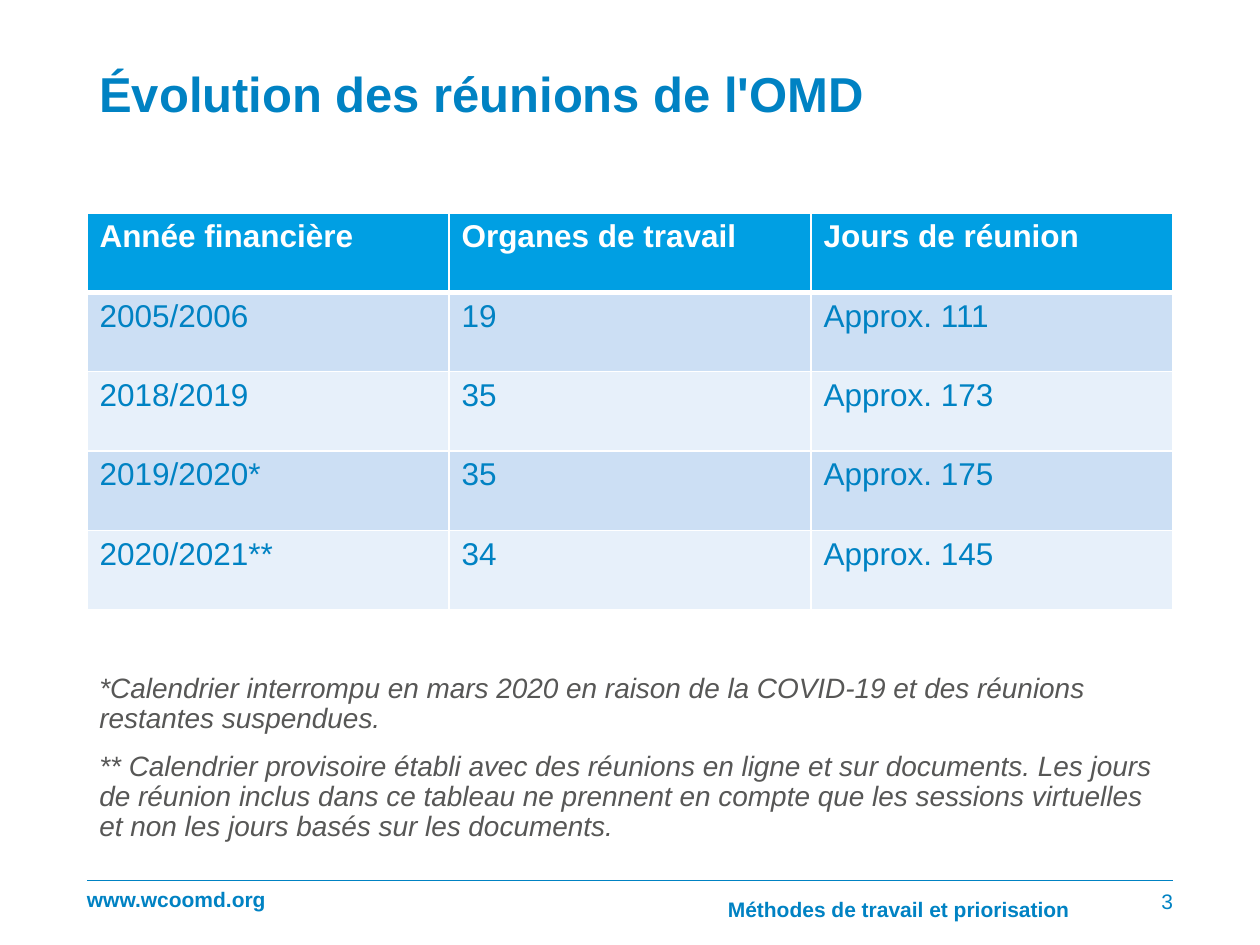
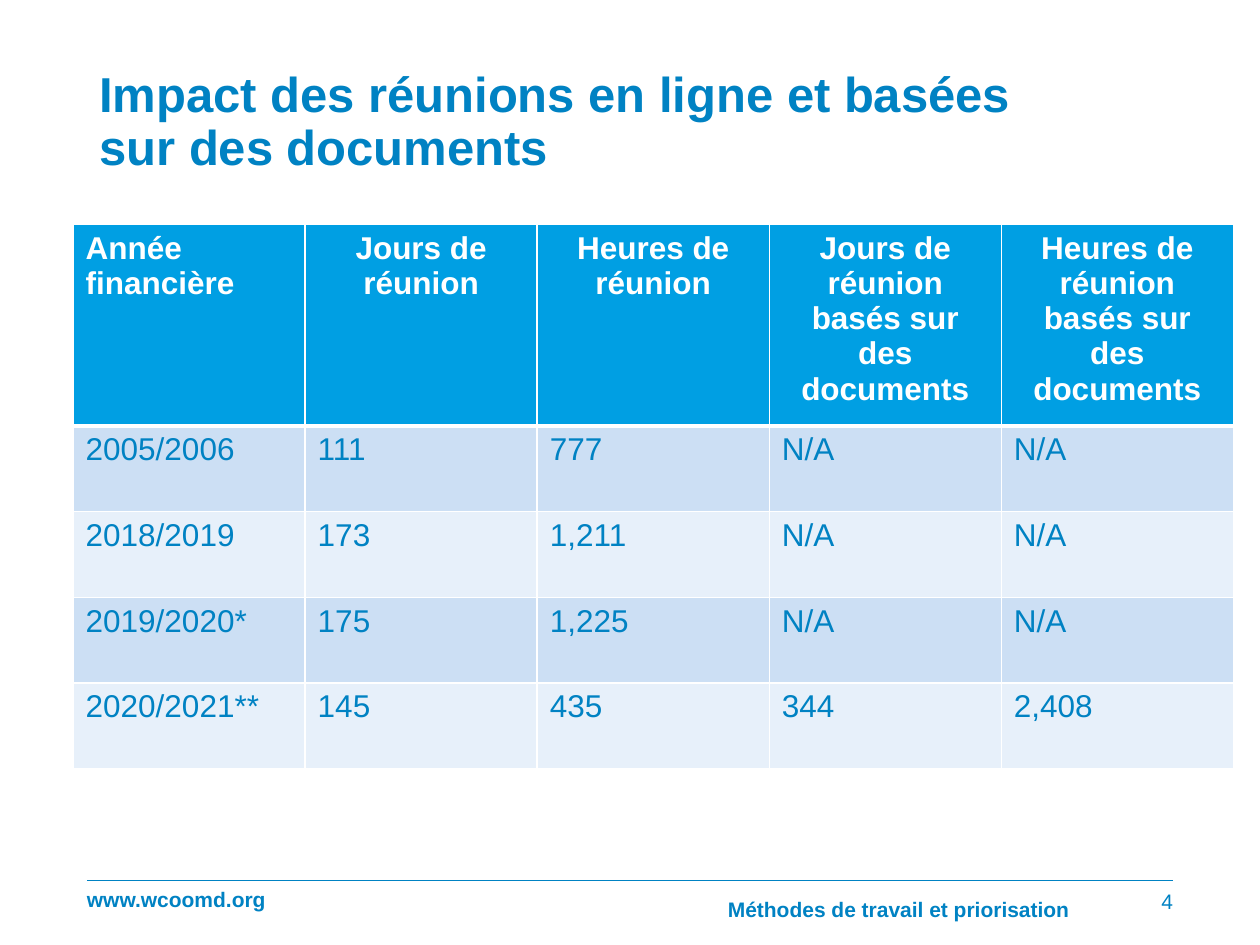
from lxml import etree
from pptx import Presentation
from pptx.dml.color import RGBColor
from pptx.enum.shapes import MSO_CONNECTOR
from pptx.enum.text import MSO_ANCHOR, PP_ALIGN
from pptx.oxml.ns import qn
from pptx.util import Inches, Pt

LEFT, CENTER, RIGHT = PP_ALIGN.LEFT, PP_ALIGN.CENTER, PP_ALIGN.RIGHT
TOP, MIDDLE = MSO_ANCHOR.TOP, MSO_ANCHOR.MIDDLE
STRAIGHT = MSO_CONNECTOR.STRAIGHT

FONT = "Arial"
BLUE = RGBColor(0x00, 0x82, 0xC3)
HEAD = RGBColor(0x00, 0x9F, 0xE3)
BANDS = (RGBColor(0xCC, 0xDF, 0xF4), RGBColor(0xE7, 0xF0, 0xFA))
GREY = RGBColor(0x57, 0x57, 0x56)
WHITE = RGBColor(0xFF, 0xFF, 0xFF)

MARGIN, WIDTH = 0.69, 8.62
SITE = "www.wcoomd.org"
TOPIC = "Méthodes de travail et priorisation"

MEETINGS = [
    ("Année financière", "Organes de travail", "Jours de réunion"),
    ("2005/2006", "19", "Approx. 111"),
    ("2018/2019", "35", "Approx. 173"),
    ("2019/2020*", "35", "Approx. 175"),
    ("2020/2021**", "34", "Approx. 145"),
]
IMPACT = [
    ("Année financière", "Jours de réunion", "Heures de réunion",
     "Jours de réunion basés sur des documents",
     "Heures de réunion basés sur des documents"),
    ("2005/2006", "111", "777", "N/A", "N/A"),
    ("2018/2019", "173", "1,211", "N/A", "N/A"),
    ("2019/2020*", "175", "1,225", "N/A", "N/A"),
    ("2020/2021**", "145", "435", "344", "2,408"),
]
NOTES = [
    "*Calendrier interrompu en mars 2020 en raison de la COVID-19 et des "
    "réunions restantes suspendues.",
    "** Calendrier provisoire établi avec des réunions en ligne et sur "
    "documents. Les jours de réunion inclus dans ce tableau ne prennent en "
    "compte que les sessions virtuelles et non les jours basés sur les "
    "documents.",
]


def write(frame, *texts, size=12, color=BLUE, bold=False, italic=False,
          align=LEFT, lines=None, gap=0):
    """Fill a text frame with one paragraph per text, gap points apart."""
    frame.word_wrap = True
    for i, text in enumerate(texts):
        para = frame.add_paragraph() if i else frame.paragraphs[0]
        para.alignment = align
        if lines:
            para.line_spacing = lines
        if i:
            para.space_before = Pt(gap)
        run = para.add_run()
        run.text = text
        font = run.font
        font.name, font.size = FONT, Pt(size)
        font.bold, font.italic = bold, italic
        font.color.rgb = color


def add_text(slide, box, *texts, anchor=TOP, inset=(0.1, 0.1), **style):
    frame = slide.shapes.add_textbox(*map(Inches, box)).text_frame
    frame.vertical_anchor = anchor
    frame.margin_left, frame.margin_right = map(Inches, inset)
    write(frame, *texts, **style)


def add_rule(slide, y):
    rule = slide.shapes.add_connector(
        STRAIGHT, *map(Inches, (MARGIN, y, MARGIN + WIDTH, y)))
    rule.line.color.rgb = BLUE
    rule.line.width = Pt(0.5)
    etree.SubElement(rule._element.spPr, qn("a:effectLst"))


def add_edges(cell, **widths):
    """Draw white cell borders; widths are in points, keyed by side."""
    props = cell._tc.get_or_add_tcPr()
    for side in "LRTB":
        line = etree.SubElement(props, qn(f"a:ln{side}"),
                                w=str(Pt(widths.get(side, 1))))
        fill = etree.SubElement(line, qn("a:solidFill"))
        etree.SubElement(fill, qn("a:srgbClr"), val=str(WHITE))


def add_grid(slide, box, data, heights, align=LEFT):
    """Add a table; align sets the headings after the first column."""
    count = len(data[0])
    table = slide.shapes.add_table(
        len(data), count, *map(Inches, box)).table
    for col in table.columns:
        col.width = Inches(box[2] / count)
    for r, (row, height) in enumerate(zip(data, heights)):
        table.rows[r].height = Inches(height)
        top = r == 0
        for c, text in enumerate(row):
            cell = table.cell(r, c)
            add_edges(cell, T=3 if r == 1 else 1, B=3 if top else 1)
            cell.fill.solid()
            cell.fill.fore_color.rgb = HEAD if top else BANDS[(r - 1) % 2]
            write(cell.text_frame, text, size=18, bold=top,
                  color=WHITE if top else BLUE,
                  align=align if top and c else LEFT)


def add_page(deck, title, number):
    """Add a slide with the shared title and footer."""
    slide = deck.slides.add_slide(deck.slide_layouts[6])
    add_rule(slide, 6.99)
    add_text(slide, (MARGIN, 6.95, 1.46, 0.4), SITE, anchor=MIDDLE,
             inset=(0, 0), bold=True, lines=0.9)
    add_text(slide, (MARGIN, 0.51, 7.8, 0.99), title, size=28, bold=True,
             lines=0.9)
    add_text(slide, (8.67, 6.95, 0.64, 0.4), str(number), anchor=MIDDLE,
             inset=(0.1, 0), align=RIGHT)
    add_text(slide, (3.39, 7.03, 5.1, 0.4), TOPIC, anchor=MIDDLE,
             inset=(0.1, 0), bold=True, align=RIGHT, lines=0.9)
    return slide


def main():
    deck = Presentation()
    deck.slide_width, deck.slide_height = Inches(10), Inches(7.5)

    slide = add_page(deck, "Évolution des réunions de l'OMD", 3)
    add_grid(slide, (MARGIN, 1.69, WIDTH, 3.13), MEETINGS, [0.63] * 5)
    add_text(slide, (MARGIN, 5.3, WIDTH, 1.43), *NOTES, size=16, color=GREY,
             italic=True, lines=0.9, gap=10)

    slide = add_page(
        deck, "Impact des réunions en ligne et basées sur des documents", 4)
    add_grid(slide, (0.58, 1.78, 9.21, 4.2), IMPACT, [1.49] + [0.68] * 4,
             align=CENTER)

    deck.save("out.pptx")


if __name__ == "__main__":
    main()
